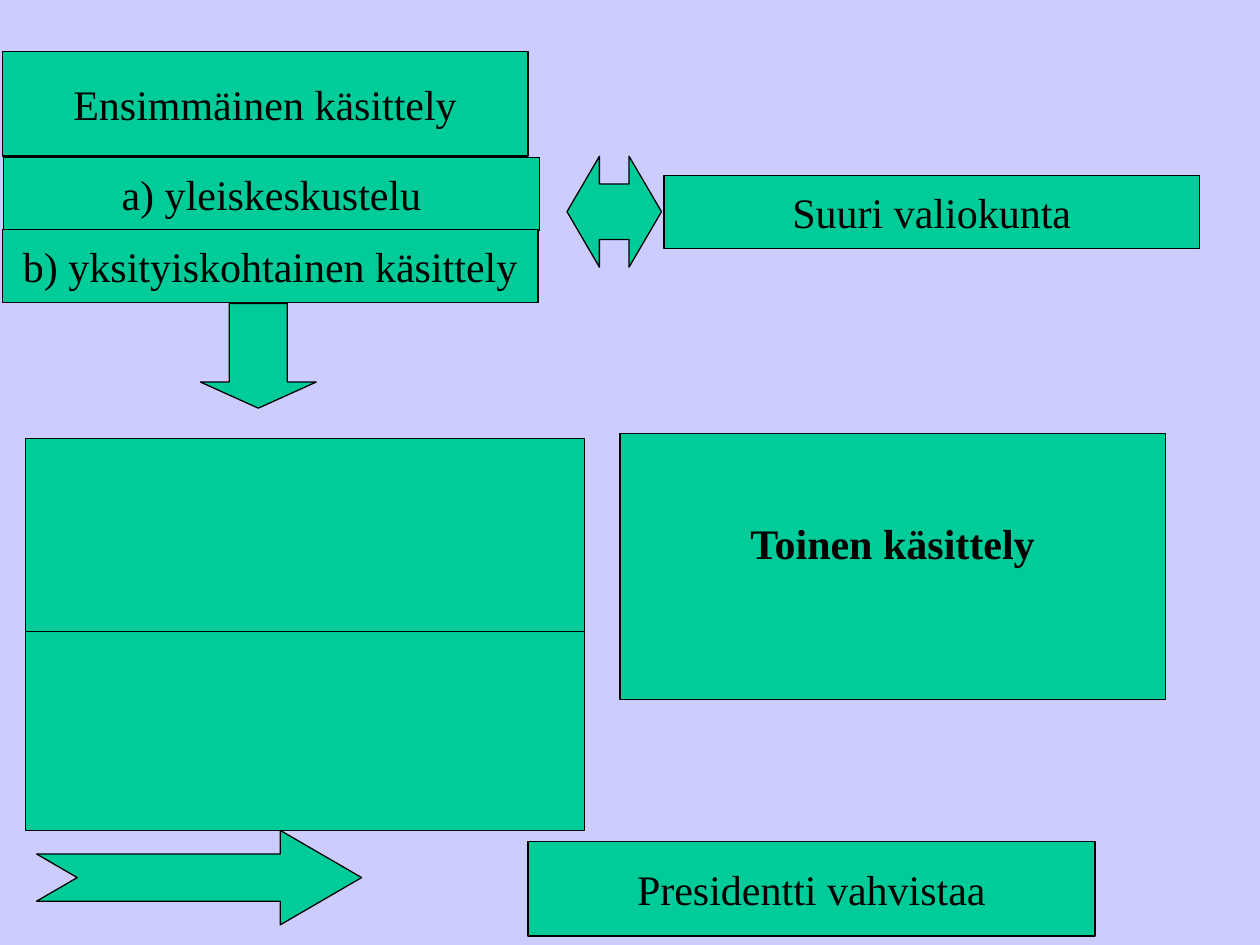
from pptx import Presentation
from pptx.dml.color import RGBColor
from pptx.enum.shapes import MSO_SHAPE
from pptx.enum.text import MSO_ANCHOR, PP_ALIGN
from pptx.util import Inches, Pt

LILAC = RGBColor(0xCC, 0xCC, 0xFF)
GREEN = RGBColor(0x00, 0xCC, 0x99)
BLACK = RGBColor(0, 0, 0)
FONT = {"name": "Times New Roman", "size": Pt(24), "bold": False}
FRAME = {"word_wrap": False, "vertical_anchor": MSO_ANCHOR.MIDDLE}

# Grid of 100 columns by 75 rows
COLS, ROWS = 100, 75
WIDTH, HEIGHT = Inches(10), Inches(7.5)


def put(obj, form):
    for key, value in form.items():
        setattr(obj, key, value)


def part(slide, box, place, kind=MSO_SHAPE.RECTANGLE, adjust=()):
    """Add a green shape at a place counted from the corner of its box."""
    x, y, wide, high = place
    shape = slide.shapes.add_shape(
        kind,
        round((box[0] + x) * WIDTH / COLS), round((box[1] + y) * HEIGHT / ROWS),
        round(wide * WIDTH / COLS), round(high * HEIGHT / ROWS))
    shape.shadow.inherit = False
    shape.fill.solid()
    shape.fill.fore_color.rgb = GREEN
    shape.line.color.rgb = BLACK
    shape.line.width = Pt(0.75)
    for i, value in enumerate(adjust):
        shape.adjustments[i] = value
    return shape


def label(shape, text, **form):
    frame = shape.text_frame
    put(frame, FRAME)
    line = frame.paragraphs[0]
    line.alignment = PP_ALIGN.CENTER
    run = line.add_run()
    run.text = text
    put(run.font, FONT | form)
    run.font.color.rgb = BLACK
    return frame


def first(slide, box):
    """First reading: heading, two stages and the arrow down."""
    wide, high = box[2:]
    label(part(slide, box, (0, 0, wide - 0.8, 8.3)), "Ensimmäinen käsittely")
    part(slide, box, (15.7, high - 8.3, 9.2, 8.3),
         MSO_SHAPE.DOWN_ARROW, (0.5, 0.25))
    stages = ["a) yleiskeskustelu", "b) yksityiskohtainen käsittely"]
    for i, text in enumerate(stages):
        place = (0.1 * (1 - i), 8.4 + 5.7 * i, wide, 5.8)
        label(part(slide, box, place), text)


def grand(slide, box):
    """Grand committee, linked by a two-way arrow."""
    wide = box[2]
    label(part(slide, box, (wide - 42.5, 1.5, 42.5, 5.8)), "Suuri valiokunta")
    part(slide, box, (0, 0, 7.5, 8.8),
         MSO_SHAPE.LEFT_RIGHT_ARROW, (0.5, 0.343))


def panels(slide, box):
    """Two stacked empty panels."""
    wide, high = box[2:]
    tall = 15.8
    for y in (0, high - tall):
        part(slide, box, (0, y, wide, tall))


def second(slide, box):
    """Second reading, its text raised above the middle."""
    shape = part(slide, box, (0, 0, *box[2:]))
    frame = label(shape, "Toinen käsittely", bold=True)
    frame.margin_bottom = Inches(0.43)


def final(slide, box):
    """Arrow to the president's confirmation."""
    wide, high = box[2:]
    part(slide, box, (0, 0, 25.8, 7.5),
         MSO_SHAPE.NOTCHED_RIGHT_ARROW, (0.5, 0.861))
    label(part(slide, box, (wide - 45, high - 7.5, 45, 7.5)),
          "Presidentti vahvistaa")


def main():
    deck = Presentation()
    put(deck, {"slide_width": WIDTH, "slide_height": HEIGHT})
    slide = deck.slides.add_slide(deck.slide_layouts[6])
    slide.background.fill.solid()
    slide.background.fill.fore_color.rgb = LILAC

    # Regions as left, top, width, height in grid steps
    first(slide, (0.2, 4.1, 42.5, 28.3))
    grand(slide, (45, 12.4, 50.2, 8.8))
    panels(slide, (2, 34.8, 44.4, 31.1))
    second(slide, (49.2, 34.4, 43.3, 21.1))
    final(slide, (2.9, 65.9, 84, 8.4))
    deck.save("out.pptx")


if __name__ == "__main__":
    main()
